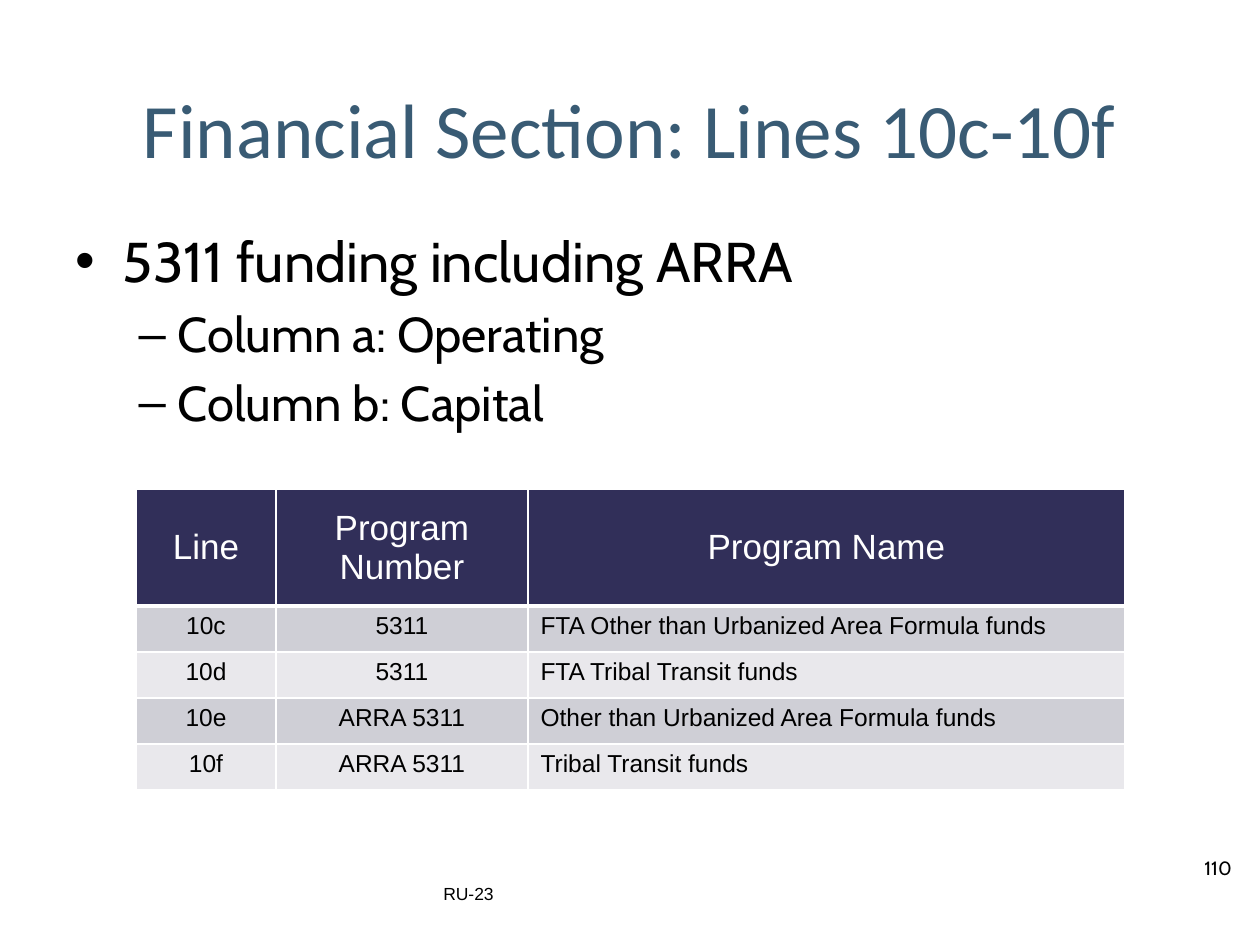
from lxml import etree
from pptx import Presentation
from pptx.dml.color import RGBColor
from pptx.enum.text import MSO_ANCHOR, PP_ALIGN
from pptx.oxml.ns import qn
from pptx.util import Inches, Pt

CENTER, LEFT = PP_ALIGN.CENTER, PP_ALIGN.LEFT
TOP, MIDDLE = MSO_ANCHOR.TOP, MSO_ANCHOR.MIDDLE

# Content
TITLE = "Financial Section: Lines 10c-10f"
BULLETS = [
    (0, "5311 funding including ARRA"),
    (1, "Column a: Operating"),
    (1, "Column b: Capital"),
]
TABLE = [
    ("Line", "Program Number", "Program Name"),
    ("10c", "5311", "FTA Other than Urbanized Area Formula funds"),
    ("10d", "5311", "FTA Tribal Transit funds"),
    ("10e", "ARRA 5311", "Other than Urbanized Area Formula funds"),
    ("10f", "ARRA 5311", "Tribal Transit funds"),
]

# Layout in inches: left, top, width, height
TITLE_AREA = (0.5, 0.48, 9, 1.07)
BODY_AREA = (0.5, 1.75, 9, 4.95)
TABLE_AREA = (1.08, 3.88, 7.85, 2.39)
COLUMNS = (1.11, 2, 4.74)
HEADER_HEIGHT = 0.93

# Formats
TITLE_FONT = {"name": "Calibri", "size": 44, "color": "395B74"}
BULLET_FONTS = [{"name": "Cabin", "size": size, "color": "000000"} for size in (32, 28)]
HEADER_FONT = {"name": "Arial", "size": 20, "color": "FFFFFF", "bold": False}
CELL_FONT = {"name": "Arial", "size": 14, "color": "000000", "bold": False}
HEADER_FILL, BAND_FILLS = "312F59", ("CFCFD6", "E9E8EC")
BORDER_COLOR = "FFFFFF"
NOTES_AT_FOOT = [
    ("110", (9.46, 6.75, 0.48, 0.4), {"name": "Cabin", "size": 11, "color": "000000"}),
    ("RU-23", (3.42, 6.96, 3.17, 0.4), {"name": "Arial", "size": 10, "color": "000000"}),
]


def color(hex_text):
    return RGBColor.from_string(hex_text)


def write(para, text, font):
    span = para.add_run()
    span.text = text
    for key, value in font.items():
        if key == "color":
            span.font.color.rgb = color(value)
        else:
            setattr(span.font, key, Pt(value) if key == "size" else value)


def place(shape, area):
    for key, value in zip(("left", "top", "width", "height"), area):
        setattr(shape, key, Inches(value))


def add_borders(cell, bottom_width):
    properties = cell._tc.get_or_add_tcPr()
    widths = {"a:lnL": 1, "a:lnR": 1, "a:lnT": 1, "a:lnB": bottom_width}
    for position, (tag, width) in enumerate(widths.items()):
        line = etree.Element(qn(tag), w=str(Pt(width)))
        fill = etree.SubElement(line, qn("a:solidFill"))
        etree.SubElement(fill, qn("a:srgbClr"), val=BORDER_COLOR)
        properties.insert(position, line)


def add_table(page):
    table = page.shapes.add_table(
        len(TABLE), len(COLUMNS), *map(Inches, TABLE_AREA)).table
    for column, width in zip(table.columns, COLUMNS):
        column.width = Inches(width)
    row_height = (TABLE_AREA[3] - HEADER_HEIGHT) / (len(TABLE) - 1)
    for r, texts in enumerate(TABLE):
        header = r == 0
        table.rows[r].height = Inches(HEADER_HEIGHT if header else row_height)
        for c, text in enumerate(texts):
            cell = table.cell(r, c)
            cell.fill.solid()
            cell.fill.fore_color.rgb = color(
                HEADER_FILL if header else BAND_FILLS[(r - 1) % 2])
            cell.vertical_anchor = MIDDLE if header else TOP
            para = cell.text_frame.paragraphs[0]
            para.alignment = CENTER if header or c < 2 else LEFT
            write(para, text, HEADER_FONT if header else CELL_FONT)
            add_borders(cell, 3 if header else 1)


def main():
    deck = Presentation()
    deck.slide_width, deck.slide_height = Inches(10), Inches(7.5)
    page = deck.slides.add_slide(deck.slide_layouts[1])

    # Title
    title = page.shapes.title
    place(title, TITLE_AREA)
    title.text_frame.vertical_anchor = MIDDLE
    para = title.text_frame.paragraphs[0]
    para.alignment = CENTER
    write(para, TITLE, TITLE_FONT)

    # Bullets, with the marks and indents of the body placeholder
    body = page.placeholders[1]
    place(body, BODY_AREA)
    for index, (level, text) in enumerate(BULLETS):
        frame = body.text_frame
        para = frame.add_paragraph() if index else frame.paragraphs[0]
        para.level = level
        write(para, text, BULLET_FONTS[level])

    add_table(page)

    # Page number and form name
    for text, area, font in NOTES_AT_FOOT:
        box = page.shapes.add_textbox(*map(Inches, area))
        box.text_frame.word_wrap = True
        write(box.text_frame.paragraphs[0], text, font)

    deck.save("out.pptx")


if __name__ == "__main__":
    main()
